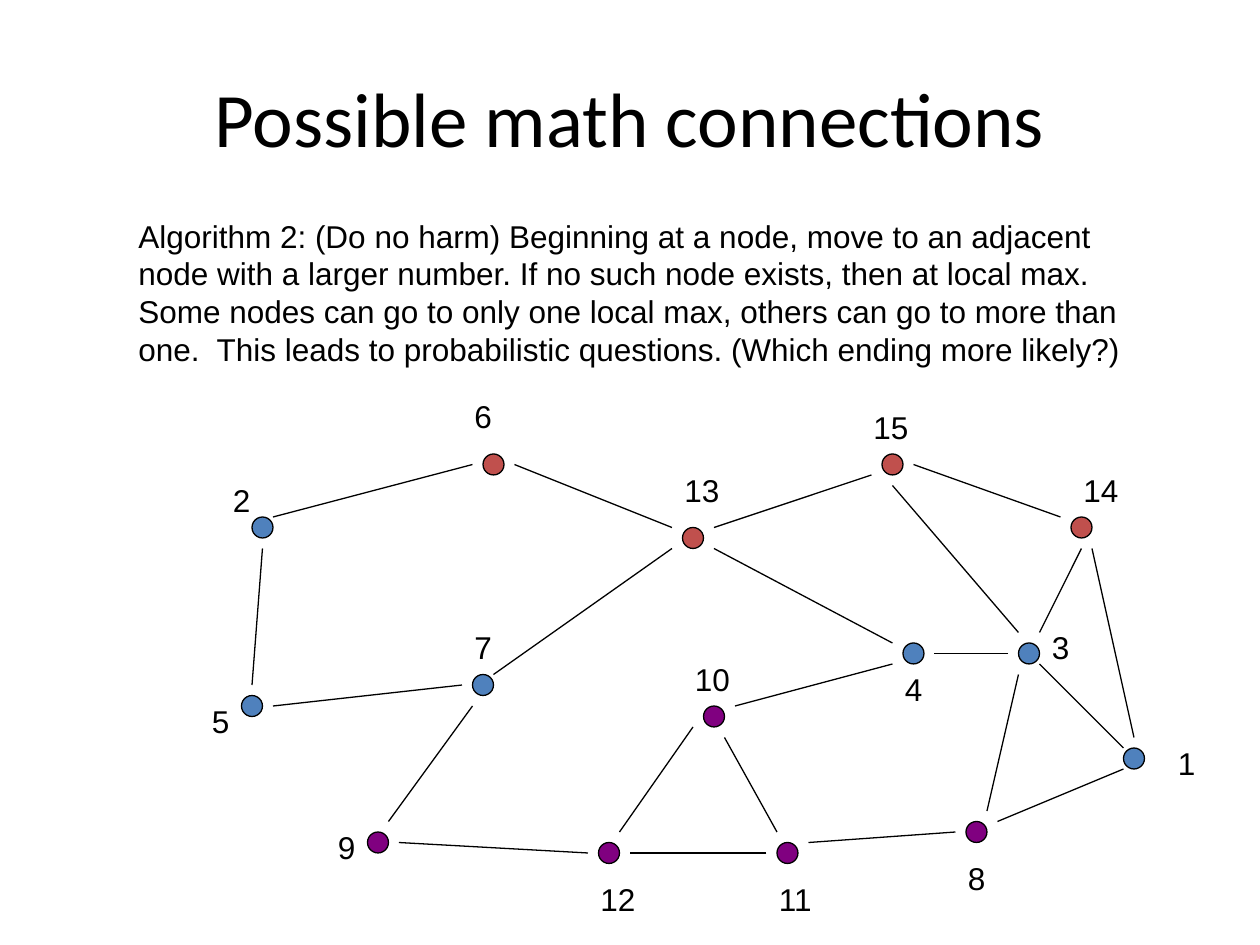
from pptx import Presentation
from pptx.dml.color import RGBColor
from pptx.enum.shapes import MSO_CONNECTOR, MSO_SHAPE
from pptx.enum.text import MSO_ANCHOR, PP_ALIGN
from pptx.util import Inches, Pt
from lxml.etree import SubElement
from pptx.oxml.ns import qn

BLACK = RGBColor(0x00, 0x00, 0x00)
BLUE = RGBColor(0x4F, 0x81, 0xBD)
RED = RGBColor(0xC0, 0x50, 0x4D)
PURPLE = RGBColor(0x80, 0x00, 0x80)

TITLE = "Possible math connections"
ALGORITHM = (
    "Algorithm 2: (Do no harm) Beginning at a node, move to an adjacent node "
    "with a larger number. If no such node exists, then at local max. Some nodes "
    "can go to only one local max, others can go to more than one.  This leads to "
    "probabilistic questions. (Which ending more likely?)"
)

# number, colour, node column and row, label column, row and width
NODES = [
    (1, BLUE, (107, 71), (111, 70, 4)),
    (2, BLUE, (24, 49), (21, 45, 6)),
    (3, BLUE, (97, 61), (99, 59, 5)),
    (4, BLUE, (86, 61), (85, 63, 4)),
    (5, BLUE, (23, 66), (19, 66, 5)),
    (6, RED, (46, 43), (44, 37, 6)),
    (7, BLUE, (45, 64), (44, 59, 5)),
    (8, PURPLE, (92, 78), (91, 81, 9)),
    (9, PURPLE, (35, 79), (31, 78, 5)),
    (10, PURPLE, (67, 67), (65, 62, 6)),
    (11, PURPLE, (74, 80), (73, 83, 7)),
    (12, PURPLE, (57, 80), (56, 83, 6)),
    (13, RED, (65, 50), (64, 44, 6)),
    (14, RED, (102, 49), (102, 44, 6)),
    (15, RED, (84, 43), (82, 38, 8)),
]

EDGES = [
    ((26, 49), (45, 44)), ((49, 44), (64, 50)), ((68, 50), (83, 45)),
    ((87, 44), (101, 49)), ((103, 52), (99, 60)), ((97, 64), (94, 77)),
    ((85, 46), (97, 60)), ((96, 62), (89, 62)), ((91, 79), (77, 80)),
    ((73, 81), (60, 81)), ((56, 81), (38, 80)), ((37, 78), (45, 67)),
    ((44, 65), (26, 67)), ((24, 65), (25, 52)), ((47, 64), (64, 52)),
    ((68, 52), (85, 61)), ((85, 63), (70, 67)), ((66, 69), (59, 79)),
    ((69, 70), (74, 79)), ((104, 52), (108, 70)), ((107, 73), (95, 78)),
    ((99, 63), (107, 71)),
]

CELL = Inches(1) // 12
TOP = Inches(0.02)
NODE_SIZE = 2 * CELL
LABEL_HEIGHT = Inches(0.4)


def grid(col, row):
    return col * CELL, TOP + row * CELL


def add_text(s, text, box, font="Arial", size=18, align=PP_ALIGN.LEFT,
             anchor=MSO_ANCHOR.TOP):
    tf = s.shapes.add_textbox(*box).text_frame
    tf.word_wrap = True
    tf.vertical_anchor = anchor
    p = tf.paragraphs[0]
    p.text = text
    p.alignment = align
    p.font.name = font
    p.font.size = Pt(size)
    p.font.color.rgb = BLACK


def set_line(sp):
    sp.line.color.rgb = BLACK
    sp.line.width = Pt(0.75)


def add_node(s, color, cell):
    sp = s.shapes.add_shape(MSO_SHAPE.OVAL, *grid(*cell), NODE_SIZE, NODE_SIZE)
    sp.shadow.inherit = False
    sp.fill.solid()
    sp.fill.fore_color.rgb = color
    set_line(sp)


def add_edge(s, start, end):
    line = s.shapes.add_connector(MSO_CONNECTOR.STRAIGHT, *grid(*start), *grid(*end))
    set_line(line)
    SubElement(line._element.spPr, qn("a:effectLst"))


def main():
    prs = Presentation()
    prs.slide_width, prs.slide_height = Inches(10), Inches(7.5)
    s = prs.slides.add_slide(prs.slide_layouts[6])

    add_text(s, TITLE, [Inches(v) for v in (0.5, 0.3, 9, 1.25)], "Calibri", 44,
             PP_ALIGN.CENTER, MSO_ANCHOR.MIDDLE)
    for start, end in EDGES:
        add_edge(s, start, end)
    for number, color, cell, (col, row, width) in NODES:
        add_node(s, color, cell)
        add_text(s, str(number), (*grid(col, row), width * CELL, LABEL_HEIGHT))
    add_text(s, ALGORITHM, [Inches(v) for v in (1, 1.67, 8.17, 1.3)])

    prs.save("out.pptx")


if __name__ == "__main__":
    main()
